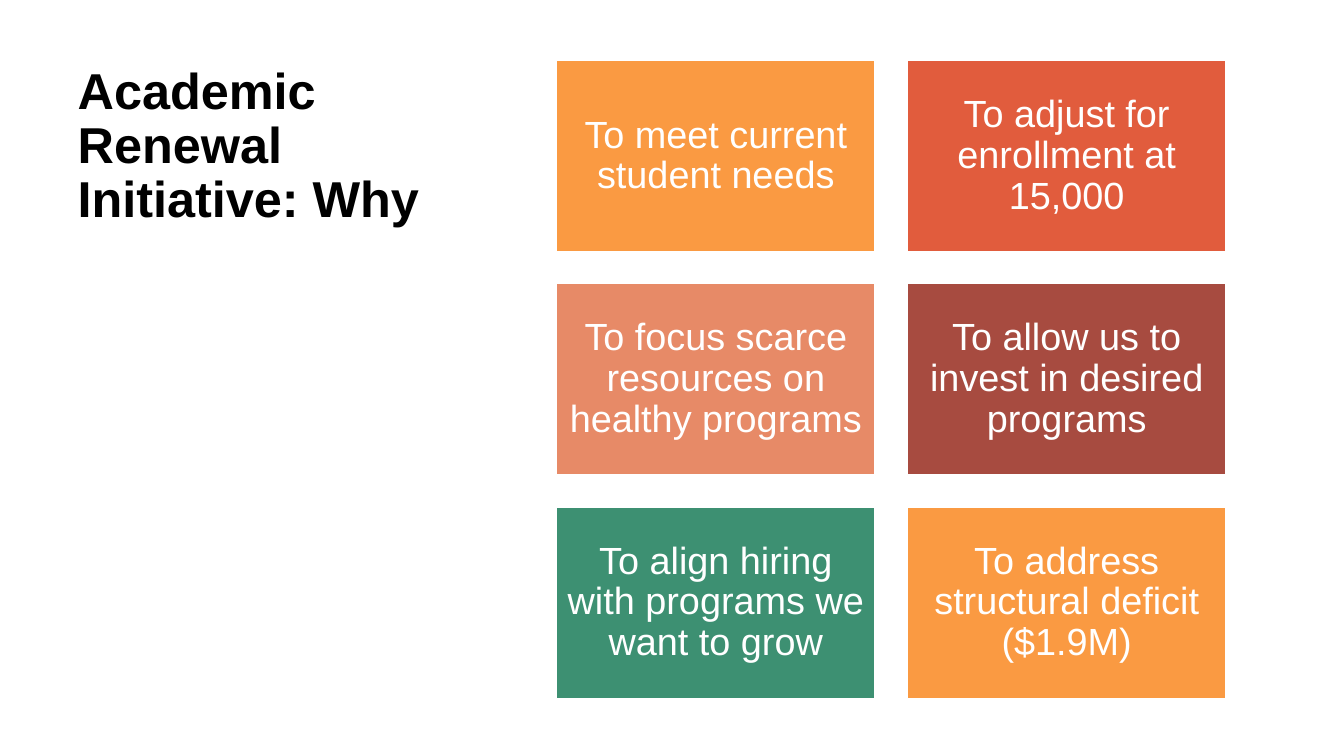
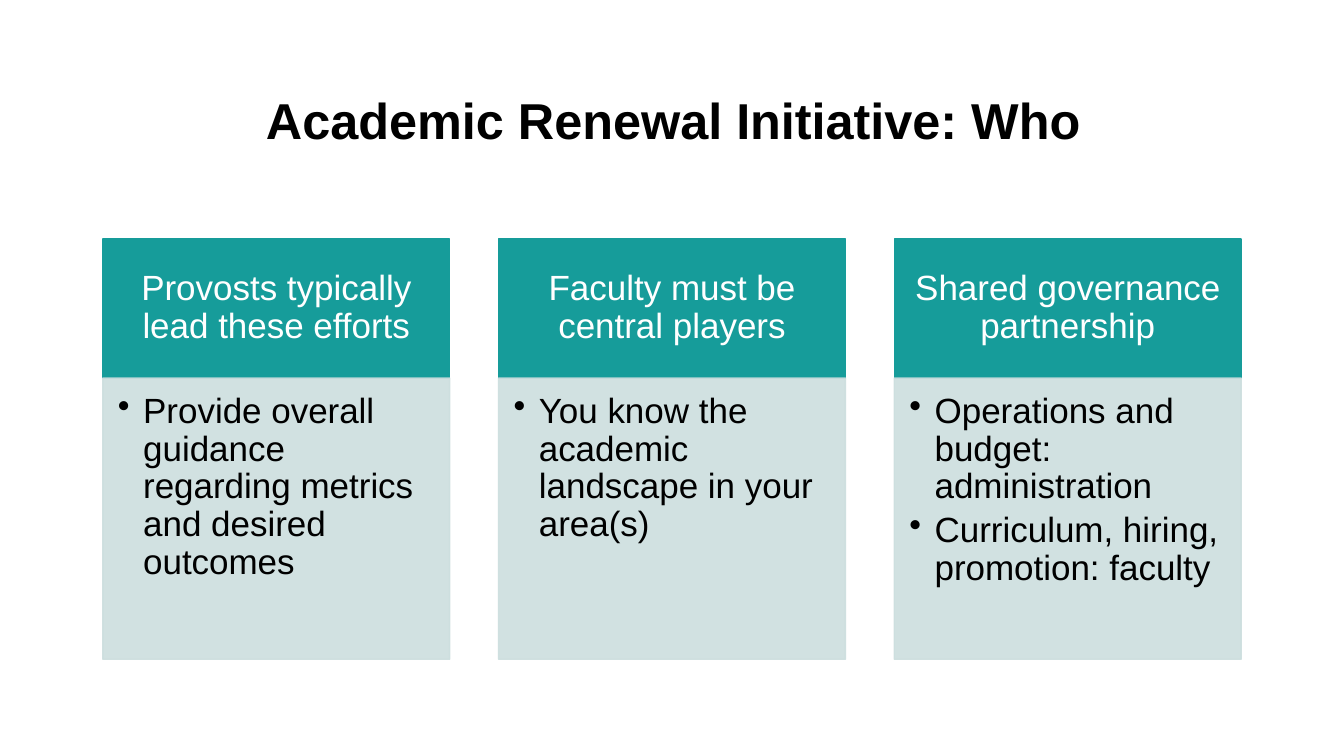
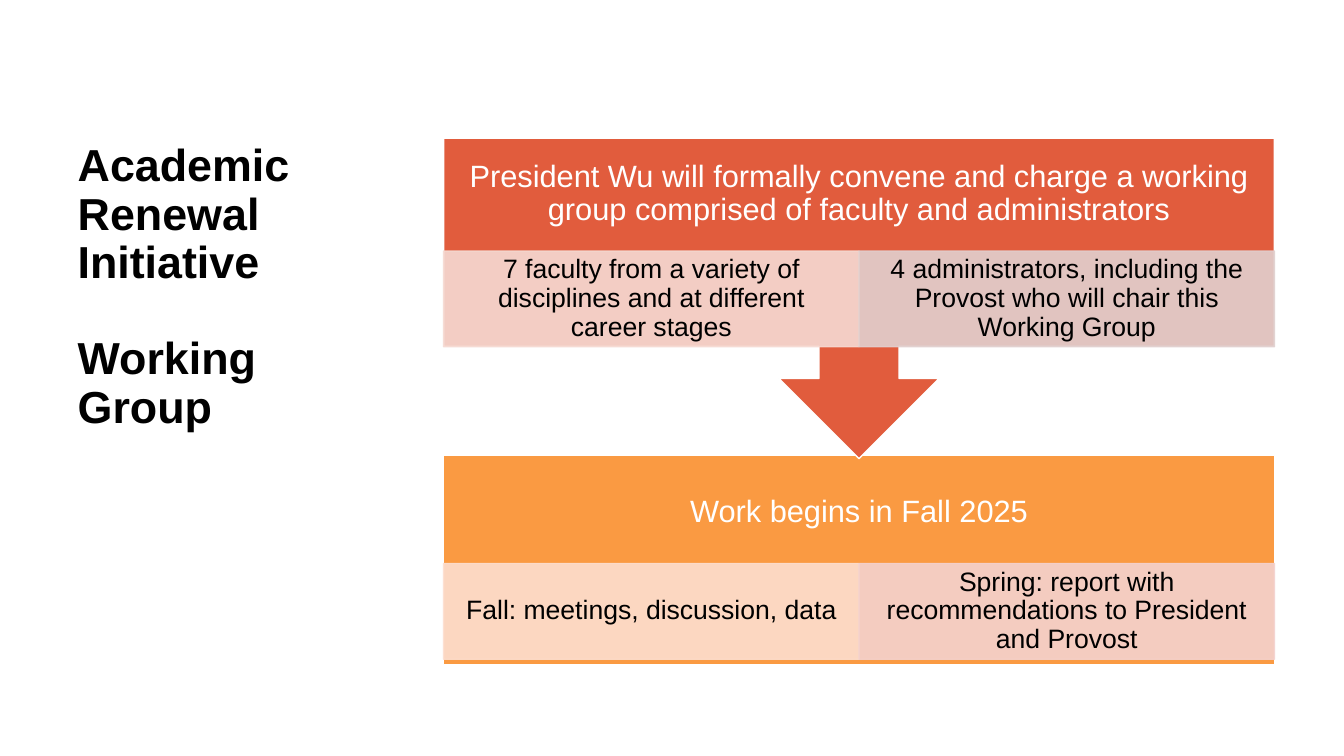
from dataclasses import dataclass

from lxml import etree
from pptx import Presentation
from pptx.dml.color import RGBColor
from pptx.enum.shapes import MSO_SHAPE
from pptx.enum.text import MSO_ANCHOR, MSO_AUTO_SIZE, PP_ALIGN
from pptx.oxml.ns import qn
from pptx.shapes.autoshape import Shape
from pptx.slide import Slide
from pptx.util import Inches, Pt

RECTANGLE = MSO_SHAPE.RECTANGLE
CALLOUT = MSO_SHAPE.DOWN_ARROW_CALLOUT
TOP, MIDDLE = MSO_ANCHOR.TOP, MSO_ANCHOR.MIDDLE
LEFT, CENTER = PP_ALIGN.LEFT, PP_ALIGN.CENTER

FONT = "Arial"
LINE_SPACING = 0.9
BLACK = RGBColor(0x00, 0x00, 0x00)
WHITE = RGBColor(0xFF, 0xFF, 0xFF)
ORANGE = RGBColor(0xFA, 0x9A, 0x42)
RED = RGBColor(0xE1, 0x5C, 0x3D)
SALMON = RGBColor(0xE7, 0x8A, 0x67)
BRICK = RGBColor(0xA7, 0x4B, 0x40)
GREEN = RGBColor(0x3D, 0x90, 0x72)
TEAL = RGBColor(0x16, 0x9C, 0x9A)
PALE_TEAL = RGBColor(0xCC, 0xDE, 0xDE)
PALE_ORANGE = RGBColor(0xFD, 0xDE, 0xCF)
PALE_ROSE = RGBColor(0xF4, 0xD2, 0xCE)
PALE_RED = RGBColor(0xF6, 0xDA, 0xD3)
PALE_BRICK = RGBColor(0xE1, 0xD0, 0xCF)


@dataclass(frozen=True)
class Box:
    left: float
    top: float
    width: float
    height: float


@dataclass(frozen=True)
class Grid:
    """Cells of one size spread evenly over an area."""
    area: Box
    columns: int
    rows: int
    cell_width: float
    cell_height: float

    def cell(self, index: int) -> Box:
        row, column = divmod(index, self.columns)
        step_x = (self.area.width - self.cell_width) / max(self.columns - 1, 1)
        step_y = (self.area.height - self.cell_height) / max(self.rows - 1, 1)
        return Box(self.area.left + column * step_x, self.area.top + row * step_y,
                   self.cell_width, self.cell_height)


@dataclass(frozen=True)
class PanelStyle:
    size: int
    color: RGBColor
    insets: tuple[float, float, float, float]  # left, top, right, bottom
    bulleted: bool = False
    opacity: int = 100


@dataclass(frozen=True)
class Panel:
    text: str
    fill: RGBColor


@dataclass(frozen=True)
class Column:
    heading: str
    points: str


@dataclass(frozen=True)
class Stage:
    kind: MSO_SHAPE
    box: Box
    heading: Panel
    heading_height: float
    details_top: float
    details: tuple[Panel, Panel]


REASON_STYLE = PanelStyle(27, WHITE, (0.11, 0.11, 0.11, 0.11))
HEADING_STYLE = PanelStyle(25, WHITE, (0.19, 0.11, 0.19, 0.11))
LIST_STYLE = PanelStyle(25, BLACK, (0.15, 0.15, 0.19, 0.22), bulleted=True, opacity=90)
DETAIL_STYLE = PanelStyle(19, BLACK, (0.15, 0.03, 0.15, 0.03), opacity=90)

# Slide 1: six reasons
REASON_GRID = Grid(Box(5.52, 0.6, 6.64, 6.33), 2, 3, 3.16, 1.9)
REASONS = (
    Panel("To meet current student needs", ORANGE),
    Panel("To adjust for enrollment at 15,000", RED),
    Panel("To focus scarce resources on healthy programs", SALMON),
    Panel("To allow us to invest in desired programs", BRICK),
    Panel("To align hiring with programs we want to grow", GREEN),
    Panel("To address structural deficit ($1.9M)", ORANGE),
)

# Slide 2: three columns of heading and list
HEADING_GRID = Grid(Box(1.02, 2.37, 11.29, 1.38), 3, 1, 3.44, 1.38)
LIST_GRID = Grid(Box(1.02, 3.75, 11.29, 2.79), 3, 1, 3.44, 2.79)
COLUMNS = (
    Column("Provosts typically lead these efforts",
           "Provide overall guidance regarding metrics and desired outcomes"),
    Column("Faculty must be central players",
           "You know the academic landscape in your area(s)"),
    Column("Shared governance partnership",
           "Operations and budget: administration\nCurriculum, hiring, promotion: faculty"),
)

# Slide 3: two stages, the later one drawn first so the arrow lies over it
STAGE_LEFT, STAGE_WIDTH, STAGE_BODY_HEIGHT = 4.4, 8.24, 2.07
STAGE_INSET, DETAIL_HEIGHT = 0.17, 0.95
STAGES = (
    Stage(RECTANGLE, Box(STAGE_LEFT, 4.52, STAGE_WIDTH, STAGE_BODY_HEIGHT),
          Panel("Work begins in Fall 2025", ORANGE), 1.12, 5.59,
          (Panel("Fall: meetings, discussion, data", PALE_ORANGE),
           Panel("Spring: report with recommendations to President and Provost", PALE_ROSE))),
    Stage(CALLOUT, Box(STAGE_LEFT, 1.37, STAGE_WIDTH, 3.18),
          Panel("President Wu will formally convene and charge a working group "
                "comprised of faculty and administrators", RED), 1.11, 2.49,
          (Panel("7 faculty from a variety of disciplines and at different career stages",
                 PALE_RED),
           Panel("4 administrators, including the Provost who will chair this Working Group",
                 PALE_BRICK))),
)


def place(shape: Shape, box: Box) -> None:
    shape.left, shape.top = Inches(box.left), Inches(box.top)
    shape.width, shape.height = Inches(box.width), Inches(box.height)


def format_text(shape: Shape, size: int, color: RGBColor, alignment: PP_ALIGN,
                anchor: MSO_ANCHOR, bold: bool = False) -> None:
    frame = shape.text_frame
    frame.word_wrap = True
    frame.auto_size = MSO_AUTO_SIZE.NONE
    frame.vertical_anchor = anchor
    for paragraph in frame.paragraphs:
        paragraph.alignment = alignment
        paragraph.line_spacing = LINE_SPACING
        for run in paragraph.runs:
            run.font.name, run.font.size, run.font.bold = FONT, Pt(size), bold
            run.font.color.rgb = color


def add_titled_slide(presentation: Presentation, text: str, box: Box, size: int = 36,
                     alignment: PP_ALIGN = LEFT, anchor: MSO_ANCHOR = TOP) -> Slide:
    slide = presentation.slides.add_slide(presentation.slide_layouts[5])
    title = slide.shapes.title
    place(title, box)
    title.text_frame.text = text
    format_text(title, size, BLACK, alignment, anchor, bold=True)
    return slide


def add_bullets(shape: Shape) -> None:
    for paragraph in shape.text_frame.paragraphs:
        paragraph.space_after = Pt(4)
        properties = paragraph._p.get_or_add_pPr()
        properties.set("marL", str(Inches(0.25)))
        properties.set("indent", str(-Inches(0.25)))
        etree.SubElement(properties, qn("a:buChar")).set("char", "•")


def set_opacity(shape: Shape, percent: int) -> None:
    for color in shape._element.spPr.iter(qn("a:srgbClr")):
        etree.SubElement(color, qn("a:alpha")).set("val", str(percent * 1000))


def add_panel(slide: Slide, box: Box, panel: Panel, style: PanelStyle,
              line: RGBColor, kind: MSO_SHAPE = RECTANGLE) -> None:
    shape = slide.shapes.add_shape(kind, 0, 0, 0, 0)
    place(shape, box)
    shape.shadow.inherit = False
    shape.fill.solid()
    shape.fill.fore_color.rgb = panel.fill
    shape.line.color.rgb = line
    shape.line.width = Pt(1)
    if style.opacity < 100:
        set_opacity(shape, style.opacity)
    frame = shape.text_frame
    frame.text = panel.text
    frame.margin_left, frame.margin_top, frame.margin_right, frame.margin_bottom = (
        Inches(inset) for inset in style.insets)
    if style.bulleted:
        format_text(shape, style.size, style.color, LEFT, TOP)
        add_bullets(shape)
    else:
        format_text(shape, style.size, style.color, CENTER, MIDDLE)


def add_stage(slide: Slide, stage: Stage) -> None:
    # The bottom inset keeps the heading above the detail row
    bottom = STAGE_BODY_HEIGHT - stage.heading_height + STAGE_INSET
    style = PanelStyle(22, WHITE, (STAGE_INSET, STAGE_INSET, STAGE_INSET, bottom))
    add_panel(slide, stage.box, stage.heading, style, WHITE, stage.kind)
    row = Box(STAGE_LEFT, stage.details_top, STAGE_WIDTH, DETAIL_HEIGHT)
    grid = Grid(row, 2, 1, STAGE_WIDTH / 2, DETAIL_HEIGHT)
    for index, detail in enumerate(stage.details):
        add_panel(slide, grid.cell(index), detail, DETAIL_STYLE, detail.fill)


def main() -> None:
    presentation = Presentation()
    presentation.slide_width, presentation.slide_height = Inches(13.33), Inches(7.5)

    # Why
    slide = add_titled_slide(presentation, "Academic Renewal Initiative: Why",
                             Box(0.67, 0.6, 3.82, 6.33))
    for index, reason in enumerate(REASONS):
        add_panel(slide, REASON_GRID.cell(index), reason, REASON_STYLE, WHITE)

    # Who
    slide = add_titled_slide(presentation, "Academic Renewal Initiative: Who",
                             Box(1.67, 0.6, 10.02, 1.24), alignment=CENTER, anchor=MIDDLE)
    for index, column in enumerate(COLUMNS):
        add_panel(slide, HEADING_GRID.cell(index), Panel(column.heading, TEAL),
                  HEADING_STYLE, TEAL)
        add_panel(slide, LIST_GRID.cell(index), Panel(column.points, PALE_TEAL),
                  LIST_STYLE, PALE_TEAL)

    # Working group
    slide = add_titled_slide(presentation, "Academic Renewal Initiative\nWorking Group",
                             Box(0.67, 1.37, 3.18, 5.22), size=32)
    slide.shapes.title.text_frame.paragraphs[1].space_before = Pt(34)
    for stage in STAGES:
        add_stage(slide, stage)

    presentation.save("out.pptx")


if __name__ == "__main__":
    main()
